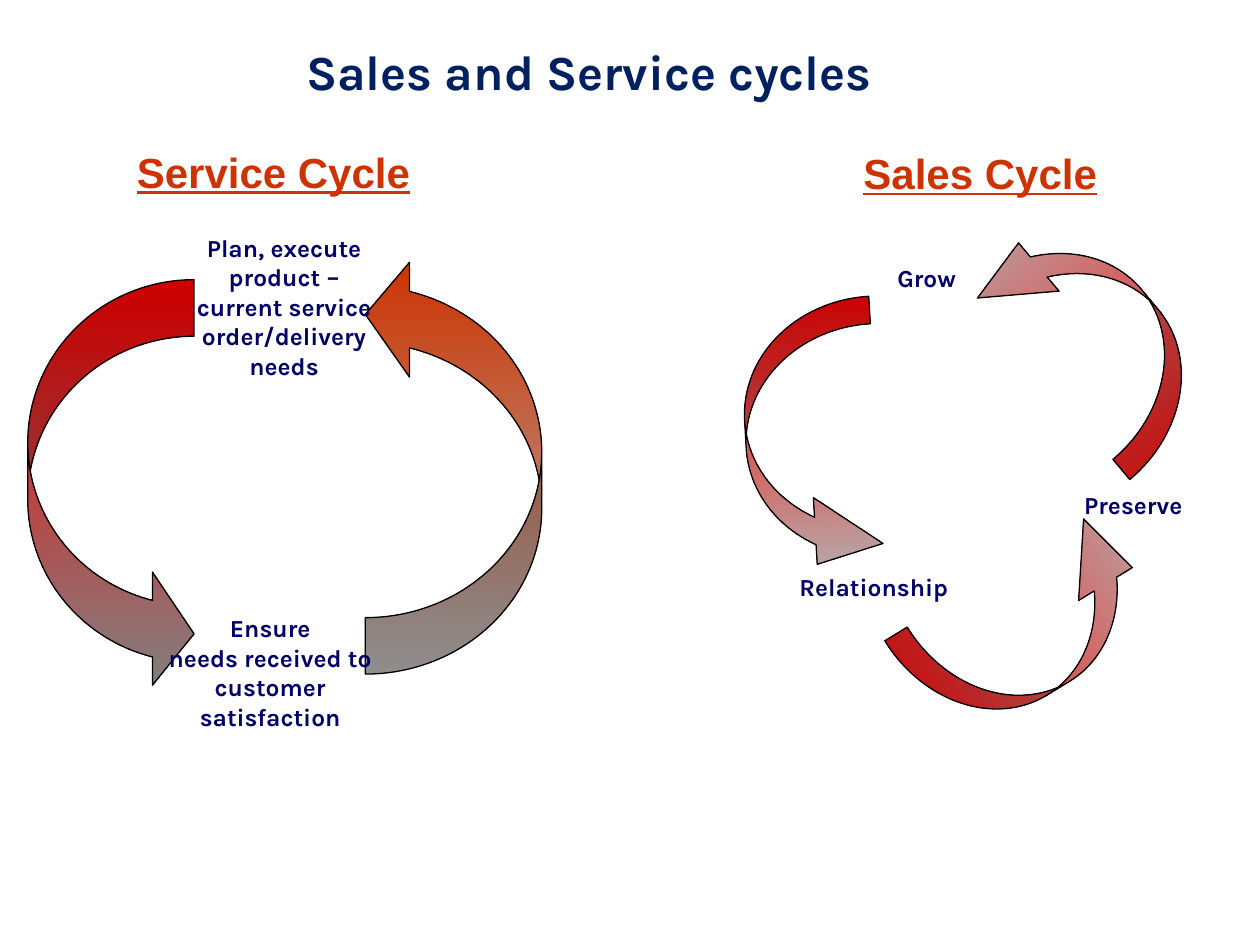
from typing import NamedTuple

from pptx import Presentation
from pptx import util as u
from pptx.dml.color import RGBColor
from pptx.enum import shapes, text
from pptx.oxml.ns import qn

NAVY, INDIGO, RUST = "002060", "000066", "CC3300"
RED, GREY, SILVER = "FF0000", "808080", "B2B2B2"
RIGHT = shapes.MSO_SHAPE.CURVED_RIGHT_ARROW
LEFT = shapes.MSO_SHAPE.CURVED_LEFT_ARROW


class Box(NamedTuple):
    left: float
    top: float
    width: float
    height: float


class Label(NamedTuple):
    wording: str
    box: Box


class CycleArrow(NamedTuple):
    box: Box
    adjustments: tuple[float, float, float]
    start: str = RED
    end: str = SILVER
    rotation: float = 0
    kind: shapes.MSO_SHAPE = RIGHT
    flipped: bool = False


HEADINGS = [
    Label("Service Cycle", Box(0.67, 1.11, 3, 0.5)),
    Label("Sales Cycle", Box(6.28, 1.12, 3, 0.5)),
]
STAGES = [
    Label("Ensure\vneeds received to customer satisfaction", Box(1.18, 4.82, 1.93, 1.04)),
    Label("Plan, execute product – current service order/delivery needs", Box(1.43, 1.8, 1.65, 1.51)),
    Label("Grow", Box(6.59, 2.04, 1.53, 0.33)),
    Label("Preserve", Box(8.23, 3.84, 1.53, 0.33)),
    Label("Relationship", Box(6.17, 4.49, 1.53, 0.33)),
]
ARROWS = [
    CycleArrow(Box(0.22, 2.22, 1.32, 3.26), (0.34, 0.68, 0.25), end=GREY),
    CycleArrow(Box(2.9, 2.04, 1.4, 3.31), (0.32, 0.65, 0.25), SILVER, RUST, 180, LEFT, True),
    CycleArrow(Box(5.92, 2.38, 1.04, 2.23), (0.21, 0.51, 0.51), rotation=356.7),
    CycleArrow(Box(7.67, 3.93, 1.04, 2.1), (0.2, 0.48, 0.51), rotation=238.5),
    CycleArrow(Box(8.16, 1.59, 1.04, 2.13), (0.2, 0.48, 0.51), rotation=140),
]


def color(value: str) -> RGBColor:
    return RGBColor.from_string(value)


def inches(box: Box) -> list[u.Length]:
    return [u.Inches(length) for length in box]


def write(shape, wording: str, *, size: float, fill: str, name: str = "Karla",
          underline: bool = False, wrap: bool = True,
          align: text.PP_ALIGN = text.PP_ALIGN.CENTER) -> None:
    frame = shape.text_frame
    frame.text = wording
    frame.word_wrap = wrap
    frame.auto_size = text.MSO_AUTO_SIZE.SHAPE_TO_FIT_TEXT
    frame.vertical_anchor = text.MSO_ANCHOR.TOP
    paragraph = frame.paragraphs[0]
    paragraph.alignment = align
    font = paragraph.font
    font.name, font.size, font.bold = name, u.Pt(size), True
    font.underline = underline
    font.color.rgb = color(fill)


def add_label(slide, label: Label, **style) -> None:
    write(slide.shapes.add_textbox(*inches(label.box)), label.wording, **style)


def add_arrow(slide, arrow: CycleArrow) -> None:
    shape = slide.shapes.add_shape(arrow.kind, *inches(arrow.box))
    shape.shadow.inherit = False
    shape.rotation = arrow.rotation
    for index, value in enumerate(arrow.adjustments):
        shape.adjustments[index] = value
    if arrow.flipped:
        shape.element.spPr.find(qn("a:xfrm")).set("flipH", "1")
    shape.fill.gradient()
    shape.fill.gradient_angle = 270
    for stop, value in zip(shape.fill.gradient_stops, (arrow.start, arrow.end)):
        stop.color.rgb = color(value)
    shape.line.color.rgb = color("000000")
    shape.line.width = u.Pt(0.75)


def main() -> None:
    presentation = Presentation()
    presentation.slide_width = u.Inches(10)
    presentation.slide_height = u.Inches(7.5)
    slide = presentation.slides.add_slide(presentation.slide_layouts[5])

    title = slide.shapes.title
    title.left, title.top, title.width, title.height = inches(Box(2.33, 0.28, 5.07, 0.57))
    write(title, "Sales and Service cycles", size=28, fill=NAVY, wrap=False,
          align=text.PP_ALIGN.LEFT)
    for arrow in ARROWS:
        add_arrow(slide, arrow)
    for heading in HEADINGS:
        add_label(slide, heading, size=24, fill=RUST, name="Arial", underline=True)
    for stage in STAGES:
        add_label(slide, stage, size=14, fill=INDIGO)

    presentation.save("out.pptx")


if __name__ == "__main__":
    main()
